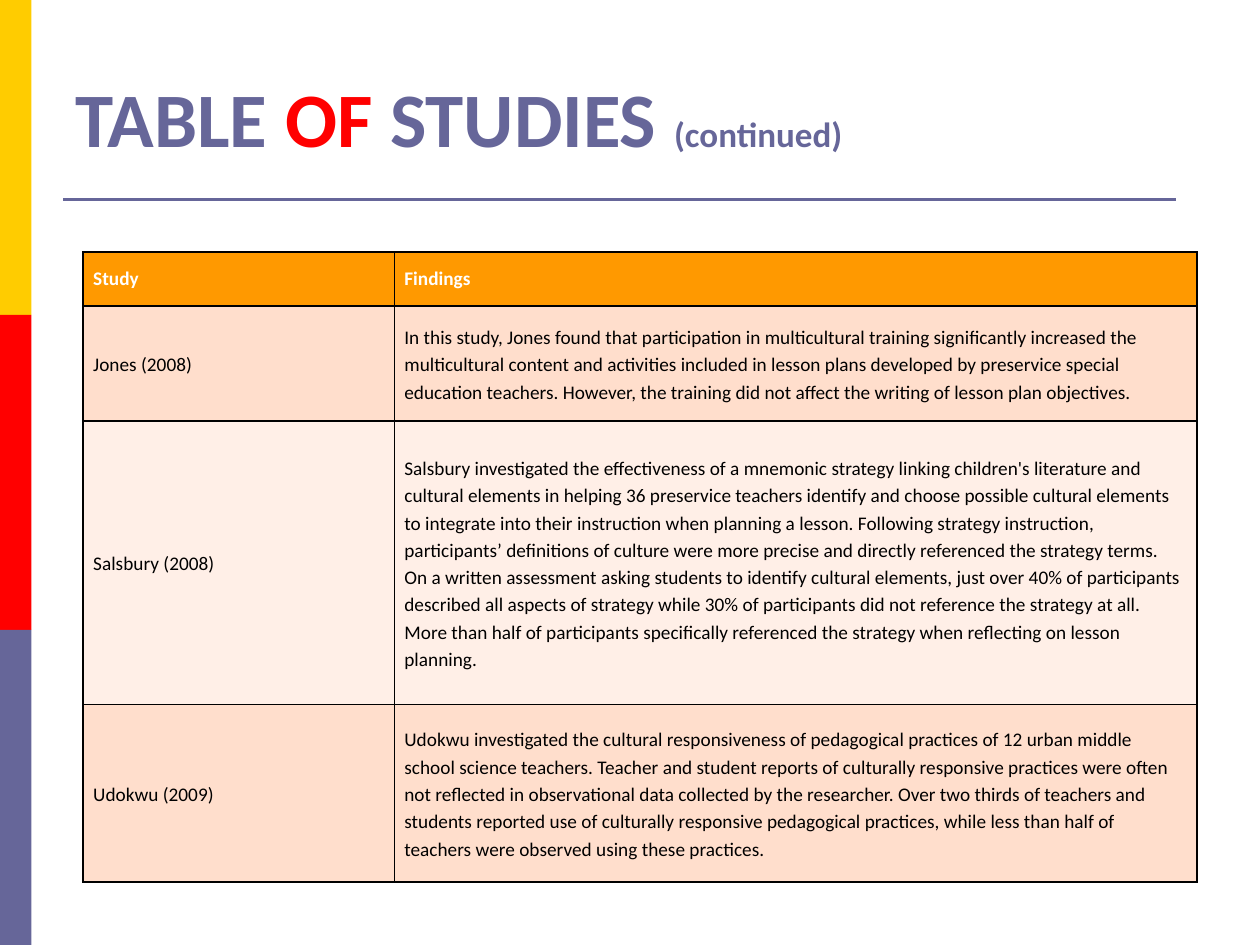
"""Build the "Table of Studies (continued)" slide with its findings table."""
import lxml.etree
import pptx
import pptx.dml.color
import pptx.enum.shapes
import pptx.enum.text
import pptx.oxml.ns
import pptx.util

Inches = pptx.util.Inches
Pt = pptx.util.Pt
RGBColor = pptx.dml.color.RGBColor

YELLOW = RGBColor(0xFF, 0xCC, 0x00)
RED = RGBColor(0xFF, 0x00, 0x00)
SLATE = RGBColor(0x66, 0x66, 0x99)
ORANGE = RGBColor(0xFF, 0x99, 0x00)
PEACH = RGBColor(0xFF, 0xDE, 0xCC)
PALE_PEACH = RGBColor(0xFF, 0xEF, 0xE7)
WHITE = RGBColor(0xFF, 0xFF, 0xFF)
BLACK = RGBColor(0x00, 0x00, 0x00)

TITLE_SPANS = [
    ("TABLE ", 44, SLATE),
    ("OF", 44, RED),
    (" STUDIES ", 44, SLATE),
    ("(continued)", 20, SLATE),
]
STUDIES = [
    ("Study", "Findings"),
    ("Jones (2008)",
     "In this study, Jones found that participation in multicultural training "
     "significantly increased the multicultural content and activities included in "
     "lesson plans developed by preservice special education teachers. However, the "
     "training did not affect the writing of lesson plan objectives."),
    ("Salsbury (2008)",
     "Salsbury investigated the effectiveness of a mnemonic strategy linking "
     "children's literature and cultural elements in helping 36 preservice teachers "
     "identify and choose possible cultural elements to integrate into their "
     "instruction when planning a lesson. Following strategy instruction, "
     "participants’ definitions of culture were more precise and directly referenced "
     "the strategy terms.  On a written assessment asking students to identify "
     "cultural elements, just over 40% of participants described all aspects of "
     "strategy while 30% of participants did not reference the strategy at all. More "
     "than half of participants specifically referenced the strategy when reflecting "
     "on lesson planning."),
    ("Udokwu (2009)",
     "Udokwu investigated the cultural responsiveness of pedagogical practices of 12 "
     "urban middle school science teachers. Teacher and student reports of culturally "
     "responsive practices were often not reflected in observational data collected "
     "by the researcher. Over two thirds of teachers and students reported use of "
     "culturally responsive pedagogical practices, while less than half of teachers "
     "were observed using these practices."),
]
SIDE_BANDS = [YELLOW, RED, SLATE]
COLUMN_WIDTHS = [2.47, 6.37]
ROW_HEIGHTS = [0.43, 0.91, 2.25, 1.41]
ROW_FILLS = [ORANGE, PEACH, PALE_PEACH, PEACH]

TITLE_PLACE = {"left": Inches(0.5), "top": Inches(0.3),
               "width": Inches(9), "height": Inches(1.25)}
CELL_FORMAT = {"vertical_anchor": pptx.enum.text.MSO_ANCHOR.MIDDLE,
               "margin_left": Inches(0.08), "margin_right": Inches(0.09),
               "margin_top": 0, "margin_bottom": 0}


def apply(target, values):
    for name, value in values.items():
        setattr(target, name, value)


def add_span(para, text, size, color, bold):
    span = para.add_run()
    span.text = text
    apply(span.font, {"name": "Calibri", "size": Pt(size), "bold": bold})
    span.font.color.rgb = color


def add_borders(cell):
    properties = cell._tc.get_or_add_tcPr()
    qn = pptx.oxml.ns.qn
    for position, side in enumerate(("a:lnL", "a:lnR", "a:lnT", "a:lnB")):
        border = lxml.etree.Element(qn(side), w=str(Pt(1)))
        fill = lxml.etree.SubElement(border, qn("a:solidFill"))
        lxml.etree.SubElement(fill, qn("a:srgbClr"), val=str(BLACK))
        properties.insert(position, border)


def add_side_bands(page, deck):
    height = deck.slide_height // len(SIDE_BANDS)
    for index, color in enumerate(SIDE_BANDS):
        band = page.shapes.add_shape(pptx.enum.shapes.MSO_SHAPE.RECTANGLE,
                                     0, index * height, Inches(0.25), height)
        band.shadow.inherit = False
        band.fill.solid()
        band.fill.fore_color.rgb = color
        band.line.fill.background()


def add_title_rule(page):
    rule = page.shapes.add_connector(pptx.enum.shapes.MSO_CONNECTOR.STRAIGHT,
                                     Inches(0.5), Inches(1.58),
                                     Inches(9.33), Inches(1.58))
    rule.line.color.rgb = SLATE
    rule.line.width = Pt(1.75)
    lxml.etree.SubElement(rule._element.spPr, pptx.oxml.ns.qn("a:effectLst"))


def fill_title(page):
    title = page.shapes.title
    apply(title, TITLE_PLACE)
    apply(title.text_frame, {"vertical_anchor": pptx.enum.text.MSO_ANCHOR.MIDDLE,
                             "auto_size": pptx.enum.text.MSO_AUTO_SIZE.NONE,
                             "word_wrap": True})
    para = title.text_frame.paragraphs[0]
    para.alignment = pptx.enum.text.PP_ALIGN.LEFT
    for text, size, color in TITLE_SPANS:
        add_span(para, text, size, color, True)


def add_studies_table(page):
    table = page.shapes.add_table(len(STUDIES), len(COLUMN_WIDTHS),
                                  Inches(0.66), Inches(2),
                                  Inches(sum(COLUMN_WIDTHS)),
                                  Inches(sum(ROW_HEIGHTS))).table
    for column, width in zip(table.columns, COLUMN_WIDTHS):
        column.width = Inches(width)
    for index, (row, texts) in enumerate(zip(table.rows, STUDIES)):
        row.height = Inches(ROW_HEIGHTS[index])
        header = index == 0
        for cell, text in zip(row.cells, texts):
            apply(cell, CELL_FORMAT)
            cell.fill.solid()
            cell.fill.fore_color.rgb = ROW_FILLS[index]
            add_borders(cell)
            para = cell.text_frame.paragraphs[0]
            para.line_spacing = 1.0 if header else 1.15
            add_span(para, text, 11, WHITE if header else BLACK, header)


def main():
    deck = pptx.Presentation()
    apply(deck, {"slide_width": Inches(10), "slide_height": Inches(7.5)})
    page = deck.slides.add_slide(deck.slide_layouts[5])
    add_side_bands(page, deck)
    add_title_rule(page)
    fill_title(page)
    add_studies_table(page)
    deck.save("out.pptx")


if __name__ == "__main__":
    main()
